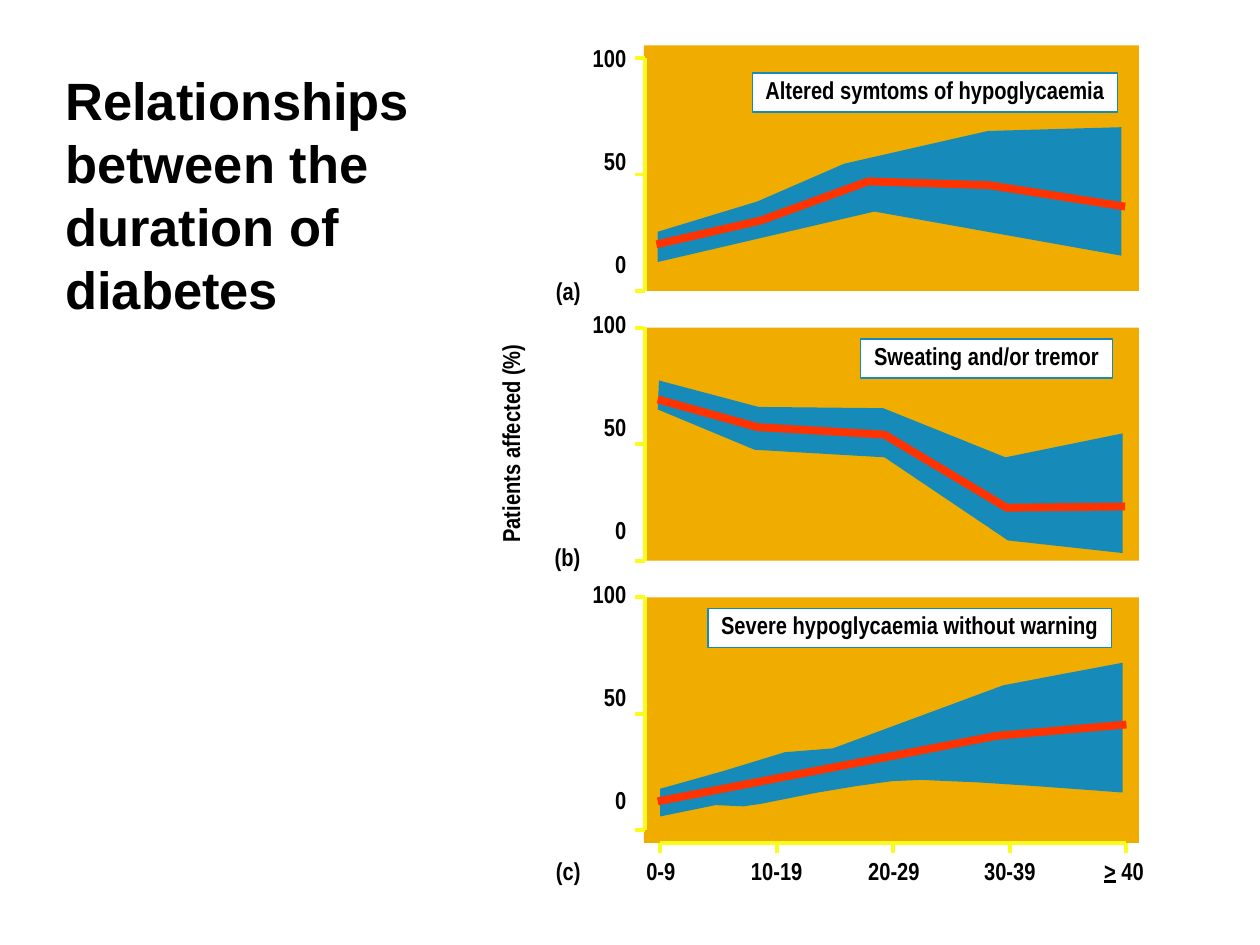
from dataclasses import dataclass

from lxml.etree import SubElement
from pptx import Presentation
from pptx.dml.color import RGBColor
from pptx.enum.shapes import MSO_CONNECTOR, MSO_SHAPE
from pptx.enum.text import MSO_ANCHOR, PP_ALIGN
from pptx.oxml.ns import qn
from pptx.util import Emu, Pt

PX = 9144  # 100 px to the inch


@dataclass(frozen=True)
class Theme:
    panel: RGBColor = RGBColor(0xF0, 0xAD, 0x00)
    band: RGBColor = RGBColor(0x16, 0x8B, 0xBA)
    median: RGBColor = RGBColor(0xFF, 0x33, 0x00)
    axis: RGBColor = RGBColor(0xFB, 0xFB, 0x1D)
    paper: RGBColor = RGBColor(0xFF, 0xFF, 0xFF)
    ink: RGBColor = RGBColor(0x00, 0x00, 0x00)
    title_font: str = "Arial"
    label_font: str = "Arial Narrow"
    title_size: Pt = Pt(30)
    title_leading: Pt = Pt(36)
    label_size: Pt = Pt(14)
    label_leading: float = 0.85
    scale_gap: Pt = Pt(44.5)
    median_width: Pt = Pt(4.5)
    axis_width: Pt = Pt(2.25)
    frame_width: Pt = Pt(0.75)


THEME = Theme()

TITLE = "Relationships between the duration of diabetes"
Y_TITLE = "Patients affected (%)"
SCALE = ("100", "50", "0")
PANEL_LEFT, PANEL_WIDTH = 511, 393
AXIS_X, TICK, AXIS_HEIGHT = 512, 8, 185
DURATION_AXIS = {"left": 524, "right": 894, "y": 669}
LABEL_HEIGHT = 30

PANELS = [
    {
        "letter": "(a)", "letter_box": (431, 218, 40),
        "caption": "Altered symtoms of hypoglycaemia", "caption_box": (597, 58, 290),
        "top": 36, "height": 195, "axis_top": 46, "scale_top": 33,
        "band": [(890, 203), (890, 101), (784, 104), (670, 130), (601, 160),
                 (522, 184), (522, 208), (694, 168)],
        "median": [(521, 194), (604, 175), (689, 144), (785, 147), (893, 164)],
    },
    {
        "letter": "(b)", "letter_box": (430, 429, 41),
        "caption": "Sweating and/or tremor", "caption_box": (683, 269, 200),
        "top": 260, "height": 185, "axis_top": 260, "scale_top": 244,
        "band": [(891, 439), (891, 344), (798, 363), (701, 324), (602, 323),
                 (523, 302), (522, 325), (599, 357), (702, 363), (800, 429)],
        "median": [(522, 317), (601, 339), (702, 345), (799, 403), (893, 402)],
    },
    {
        "letter": "(c)", "letter_box": (431, 678, 40),
        "caption": "Severe hypoglycaemia without warning", "caption_box": (562, 483, 320),
        "top": 474, "height": 195, "axis_top": 474, "scale_top": 458,
        "band": [(524, 626), (524, 648), (568, 639), (590, 640), (604, 638),
                 (634, 632), (649, 629), (679, 624), (708, 620), (731, 619),
                 (777, 621), (823, 624), (891, 629), (891, 526), (843, 535),
                 (796, 544), (661, 594), (623, 597), (574, 612)],
        "median": [(522, 636), (791, 584), (894, 575)],
    },
]

# Runs as (text, underlined), then left and width
DURATIONS = [
    ([("0-9", False)], 503, 43),
    ([("10-19", False)], 586, 61),
    ([("20-29", False)], 679, 61),
    ([("30-39", False)], 771, 61),
    ([(">", True), (" 40", False)], 866, 52),
]


def px(*lengths):
    return [Emu(round(length * PX)) for length in lengths]


def add_run(paragraph, text, font_name, size, underline=False):
    run = paragraph.add_run()
    run.text = text
    run.font.name, run.font.size, run.font.bold = font_name, size, True
    run.font.color.rgb = THEME.ink
    if underline:
        run.font.underline = True


def write_label(shape, paragraphs, alignment=PP_ALIGN.CENTER, gap=None):
    """Fill a shape with paragraphs, each a list of (text, underlined) runs."""
    frame = shape.text_frame
    frame.word_wrap = False
    frame.vertical_anchor = MSO_ANCHOR.TOP
    for index, runs in enumerate(paragraphs):
        paragraph = frame.add_paragraph() if index else frame.paragraphs[0]
        paragraph.alignment = alignment
        paragraph.line_spacing = THEME.label_leading
        if index and gap:
            paragraph.space_before = gap
        for text, underline in runs:
            add_run(paragraph, text, THEME.label_font, THEME.label_size, underline)


def add_label(slide, runs, left, top, width):
    box = slide.shapes.add_textbox(*px(left, top, width, LABEL_HEIGHT))
    write_label(box, [runs])
    return box


def add_rectangle(slide, left, top, width, height, color):
    shape = slide.shapes.add_shape(MSO_SHAPE.RECTANGLE, *px(left, top, width, height))
    shape.shadow.inherit = False
    shape.fill.solid()
    shape.fill.fore_color.rgb = color
    shape.line.fill.background()
    return shape


def add_outline(slide, points, close):
    builder = slide.shapes.build_freeform(*points[0], scale=PX)
    builder.add_line_segments(points[1:], close=close)
    shape = builder.convert_to_shape()
    shape.shadow.inherit = False
    return shape


def add_axis_line(slide, *ends):
    line = slide.shapes.add_connector(MSO_CONNECTOR.STRAIGHT, *px(*ends))
    line.line.color.rgb = THEME.axis
    line.line.width = THEME.axis_width
    SubElement(line._element.spPr, qn("a:effectLst"))


def add_title(slide):
    box = slide.shapes.add_textbox(*px(42, 50, 317, 208))
    frame = box.text_frame
    frame.word_wrap = True
    frame.vertical_anchor = MSO_ANCHOR.MIDDLE
    paragraph = frame.paragraphs[0]
    paragraph.line_spacing = THEME.title_leading
    add_run(paragraph, TITLE, THEME.title_font, THEME.title_size)


def add_panel(slide, panel):
    add_rectangle(slide, PANEL_LEFT, panel["top"], PANEL_WIDTH, panel["height"], THEME.panel)

    axis_top = panel["axis_top"]
    add_axis_line(slide, AXIS_X, axis_top, AXIS_X, axis_top + AXIS_HEIGHT)
    for index in range(len(SCALE)):
        y = axis_top + AXIS_HEIGHT * index / (len(SCALE) - 1)
        add_axis_line(slide, AXIS_X - TICK, y, AXIS_X, y)

    band = add_outline(slide, panel["band"], close=True)
    band.fill.solid()
    band.fill.fore_color.rgb = THEME.band
    band.line.fill.background()
    median = add_outline(slide, panel["median"], close=False)
    median.fill.background()
    median.line.color.rgb = THEME.median
    median.line.width = THEME.median_width

    scale = slide.shapes.add_textbox(*px(460, panel["scale_top"], 47, 219))
    write_label(scale, [[(value, False)] for value in SCALE], PP_ALIGN.RIGHT, THEME.scale_gap)
    add_label(slide, [(panel["letter"], False)], *panel["letter_box"])
    caption = add_rectangle(slide, *panel["caption_box"], 31, THEME.paper)
    caption.line.color.rgb = THEME.band
    caption.line.width = THEME.frame_width
    write_label(caption, [[(panel["caption"], False)]])


def add_duration_axis(slide):
    left, right, y = DURATION_AXIS.values()
    add_axis_line(slide, left, y, right, y)
    step = (right - left) / (len(DURATIONS) - 1)
    for index, (runs, label_left, label_width) in enumerate(DURATIONS):
        x = left + index * step
        add_axis_line(slide, x, y + TICK, x, y)
        add_label(slide, runs, label_left, 678, label_width)


def main():
    presentation = Presentation()
    presentation.slide_width, presentation.slide_height = px(1000, 750)
    slide = presentation.slides.add_slide(presentation.slide_layouts[6])
    add_title(slide)
    for panel in PANELS:
        add_panel(slide, panel)
    add_duration_axis(slide)
    add_label(slide, [(Y_TITLE, False)], 318, 337, 178).rotation = 270
    presentation.save("out.pptx")


if __name__ == "__main__":
    main()
